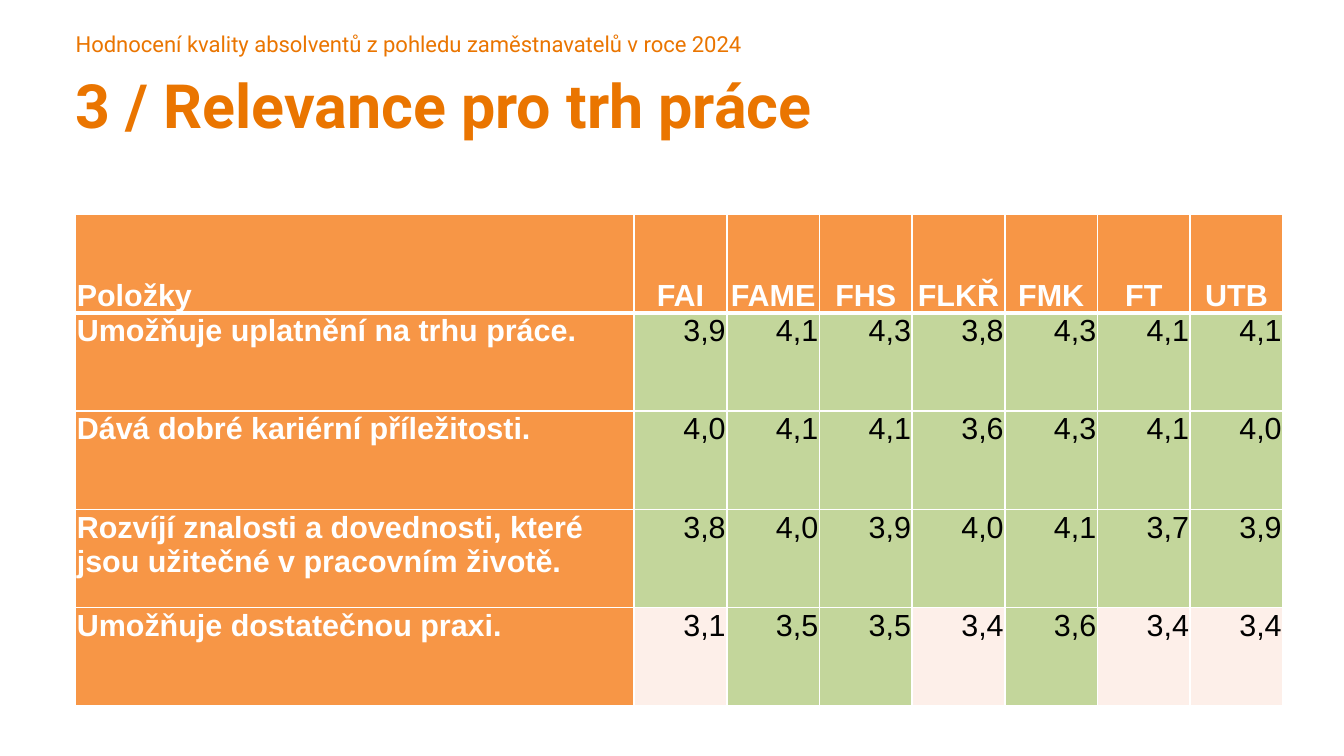
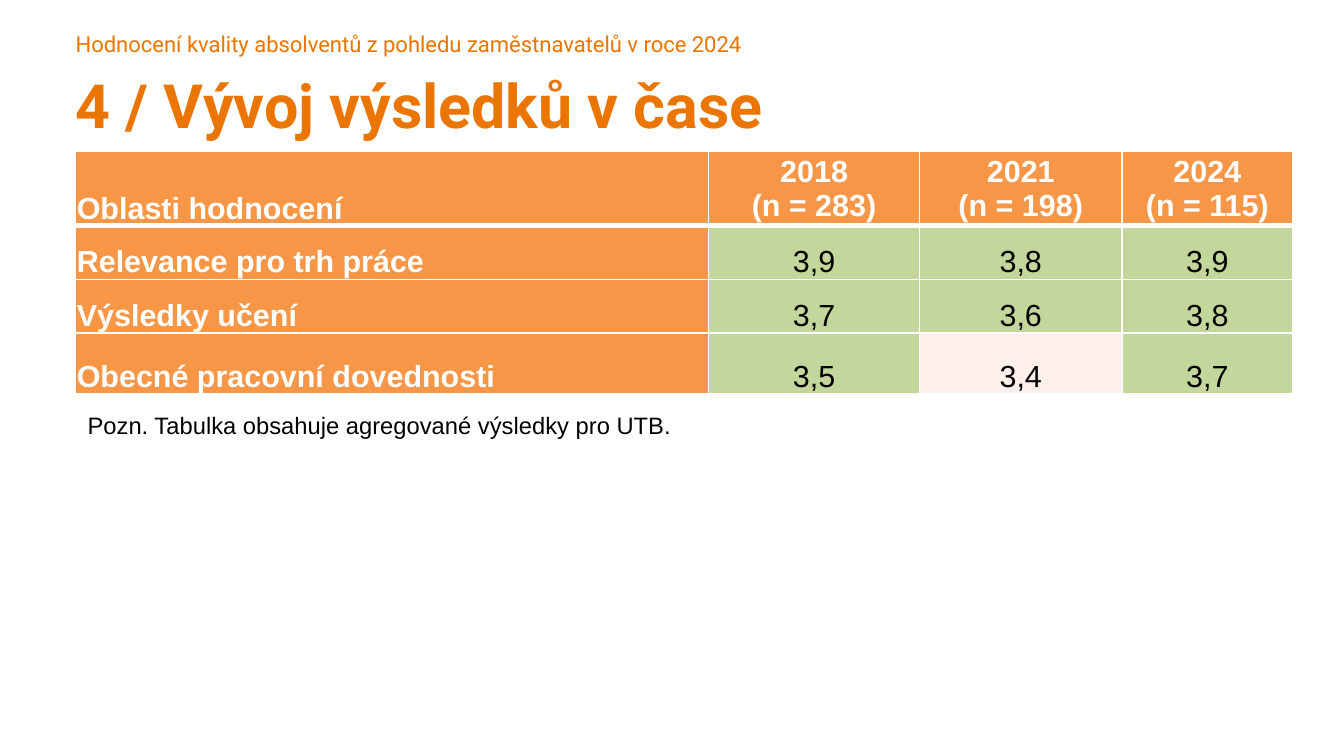
from dataclasses import dataclass

from lxml import etree
from pptx import Presentation
from pptx.dml.color import RGBColor
from pptx.enum import text as t
from pptx.oxml import ns
from pptx.slide import Slide
from pptx.table import _Cell
from pptx.util import Inches, Pt

ORANGE = RGBColor(0xEA, 0x75, 0x00)
HEADER_ORANGE = RGBColor(0xF7, 0x96, 0x46)
GREEN = RGBColor(0xC3, 0xD6, 0x9B)
PINK = RGBColor(0xFD, 0xEF, 0xE9)
WHITE = RGBColor(0xFF, 0xFF, 0xFF)
BLACK = RGBColor(0x00, 0x00, 0x00)

LEFT = 0.62
CONTENT_WIDTH = 9.92
GOOD_SCORE = 3.5
THIN, THICK = 1, 3
SURVEY = "Hodnocení kvality absolventů z pohledu zaměstnavatelů v roce 2024"

TOP, MIDDLE, BOTTOM = (
    t.MSO_ANCHOR.TOP, t.MSO_ANCHOR.MIDDLE, t.MSO_ANCHOR.BOTTOM)
ALIGN = t.PP_ALIGN


@dataclass(frozen=True)
class TextStyle:
    font: str
    size: float
    color: RGBColor
    bold: bool = False


TITLE = TextStyle("Roboto", 36, ORANGE, True)
SURVEY_LINE = TextStyle("Roboto", 13, ORANGE)
LABEL = TextStyle("Arial", 18, WHITE, True)
SCORE = TextStyle("Arial", 18, BLACK)
NOTE = TextStyle("Arial", 14, BLACK)


@dataclass(frozen=True)
class ScoreTable:
    top: float
    columns: list[float]
    rows: list[float]
    headings: list[str]
    scores: dict[str, list[float]]
    heading_anchor: t.MSO_ANCHOR
    body_anchor: t.MSO_ANCHOR
    score_align: t.PP_ALIGN


RELEVANCE = ScoreTable(
    top=1.76,
    columns=[4.58] + [0.76] * 7,
    rows=[4.03 / 5] * 5,
    headings=["Položky", "FAI", "FAME", "FHS", "FLKŘ", "FMK", "FT", "UTB"],
    scores={
        "Umožňuje uplatnění na trhu práce.":
            [3.9, 4.1, 4.3, 3.8, 4.3, 4.1, 4.1],
        "Dává dobré kariérní příležitosti.":
            [4.0, 4.1, 4.1, 3.6, 4.3, 4.1, 4.0],
        "Rozvíjí znalosti a dovednosti, které jsou užitečné v pracovním životě.":
            [3.8, 4.0, 3.9, 4.0, 4.1, 3.7, 3.9],
        "Umožňuje dostatečnou praxi.":
            [3.1, 3.5, 3.5, 3.4, 3.6, 3.4, 3.4],
    },
    heading_anchor=BOTTOM,
    body_anchor=TOP,
    score_align=ALIGN.RIGHT,
)

TREND = ScoreTable(
    top=1.24,
    columns=[5.19, 1.73, 1.66, 1.4],
    rows=[0.59, 0.44, 0.44, 0.5],
    headings=["Oblasti hodnocení", "2018\n(n = 283)", "2021\n(n = 198)",
              "2024\n(n = 115)"],
    scores={
        "Relevance pro trh práce": [3.9, 3.8, 3.9],
        "Výsledky učení": [3.7, 3.6, 3.8],
        "Obecné pracovní dovednosti": [3.5, 3.4, 3.7],
    },
    heading_anchor=MIDDLE,
    body_anchor=BOTTOM,
    score_align=ALIGN.CENTER,
)


def write(frame, wording: str, style: TextStyle,
          align: t.PP_ALIGN = ALIGN.LEFT) -> None:
    frame.text = wording
    frame.word_wrap = True
    for paragraph in frame.paragraphs:
        paragraph.alignment = align
        font = paragraph.font
        font.name, font.size, font.bold = style.font, Pt(style.size), style.bold
        font.color.rgb = style.color


def add_text(slide: Slide, top: float, height: float, wording: str,
             style: TextStyle, padded: bool = False) -> None:
    frame = slide.shapes.add_textbox(
        Inches(LEFT), Inches(top), Inches(CONTENT_WIDTH), Inches(height)
    ).text_frame
    if not padded:
        frame.margin_left = frame.margin_right = 0
        frame.margin_top = frame.margin_bottom = 0
    write(frame, wording, style)


def set_borders(cell: _Cell, above: float, below: float) -> None:
    properties = cell._tc.get_or_add_tcPr()
    widths = {"lnL": THIN, "lnR": THIN, "lnT": above, "lnB": below}
    for position, (side, width) in enumerate(widths.items()):
        line = etree.Element(ns.qn(f"a:{side}"), w=str(Pt(width)))
        fill = etree.SubElement(line, ns.qn("a:solidFill"))
        etree.SubElement(fill, ns.qn("a:srgbClr"), val=str(WHITE))
        properties.insert(position, line)


def fill_cell(cell: _Cell, wording: str, style: TextStyle, fill: RGBColor,
              align: t.PP_ALIGN, anchor: t.MSO_ANCHOR) -> None:
    cell.margin_left = cell.margin_right = cell.margin_top = Inches(0.01)
    cell.margin_bottom = 0
    cell.vertical_anchor = anchor
    cell.fill.solid()
    cell.fill.fore_color.rgb = fill
    write(cell.text_frame, wording, style, align)


def add_score_table(slide: Slide, data: ScoreTable) -> None:
    table = slide.shapes.add_table(
        len(data.rows), len(data.columns), Inches(LEFT), Inches(data.top),
        Inches(sum(data.columns)), Inches(sum(data.rows))).table
    table.horz_banding = False
    for column, width in zip(table.columns, data.columns):
        column.width = Inches(width)
    for row, height in zip(table.rows, data.rows):
        row.height = Inches(height)

    for index, heading in enumerate(data.headings):
        fill_cell(table.cell(0, index), heading, LABEL, HEADER_ORANGE,
                  ALIGN.CENTER if index else ALIGN.LEFT,
                  data.heading_anchor if index else BOTTOM)
    for row, (item, scores) in enumerate(data.scores.items(), start=1):
        fill_cell(table.cell(row, 0), item, LABEL, HEADER_ORANGE,
                  ALIGN.LEFT, data.body_anchor)
        for column, score in enumerate(scores, start=1):
            fill_cell(table.cell(row, column), f"{score:.1f}".replace(".", ","),
                      SCORE, GREEN if score >= GOOD_SCORE else PINK,
                      data.score_align, data.body_anchor)
    for row, cells in enumerate(table.rows):
        for cell in cells.cells:
            set_borders(cell, THICK if row == 1 else THIN,
                        THICK if row == 0 else THIN)


def add_score_slide(deck, title: str, data: ScoreTable) -> Slide:
    slide = deck.slides.add_slide(deck.slide_layouts[6])
    add_text(slide, 0.25, 0.22, SURVEY, SURVEY_LINE)
    add_text(slide, 0.55, 0.61, title, TITLE)
    add_score_table(slide, data)
    return slide


def main() -> None:
    deck = Presentation()
    deck.slide_width, deck.slide_height = Inches(11.02), Inches(6.2)
    add_score_slide(deck, "3 / Relevance pro trh práce", RELEVANCE)
    trend = add_score_slide(deck, "4 / Vývoj výsledků v čase", TREND)
    add_text(trend, 3.32, 0.34,
             "Pozn. Tabulka obsahuje agregované výsledky pro UTB.",
             NOTE, padded=True)
    deck.save("out.pptx")


if __name__ == "__main__":
    main()
